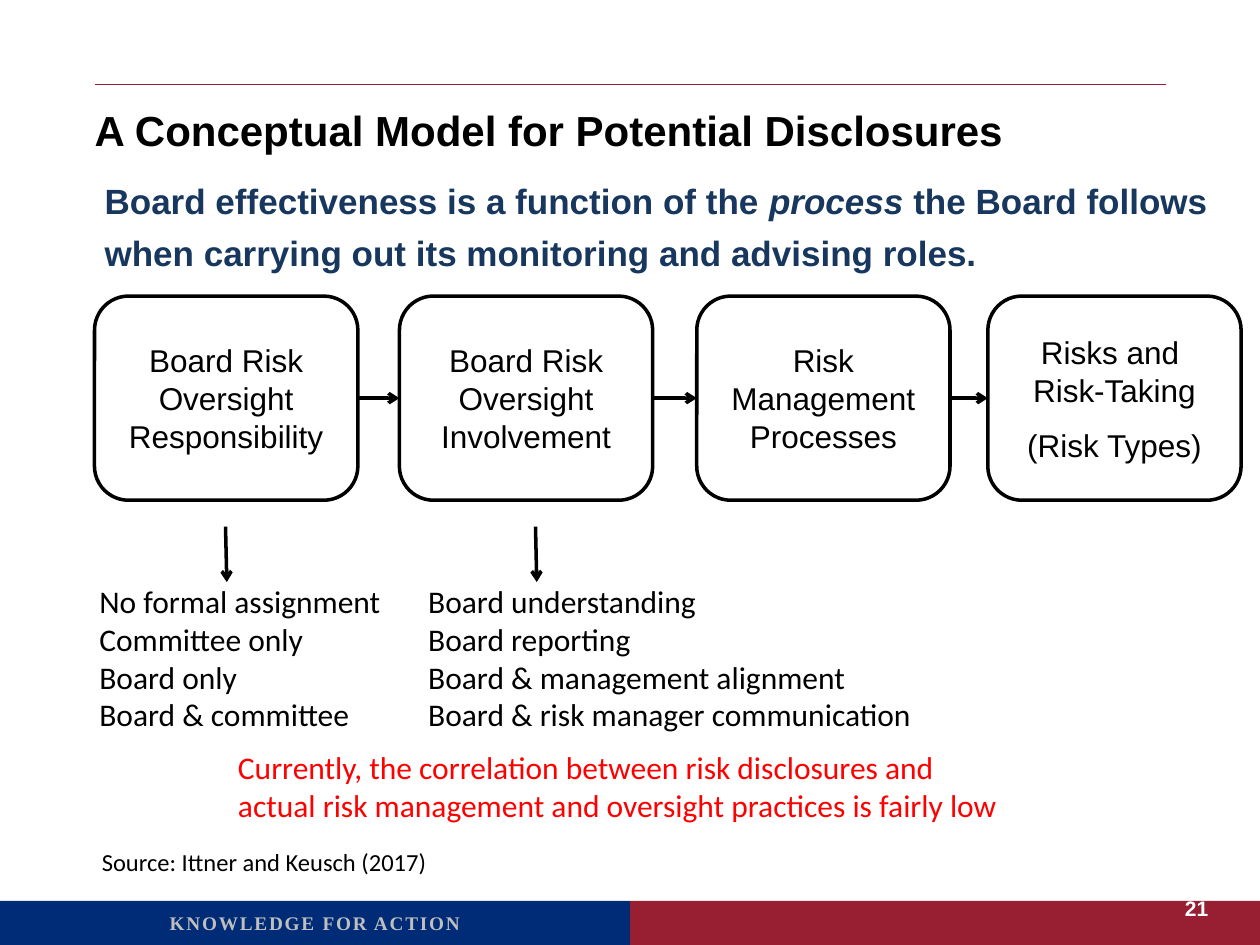
"""Build the slide on a conceptual model for potential risk disclosures."""
import pptx
import pptx.util
import pptx.dml.color
import pptx.enum.shapes
import pptx.enum.text
import pptx.oxml.ns
import lxml.etree

Inches = pptx.util.Inches
Pt = pptx.util.Pt
SHAPES = pptx.enum.shapes.MSO_SHAPE
ALIGN = pptx.enum.text.PP_ALIGN
ANCHOR = pptx.enum.text.MSO_ANCHOR
STRAIGHT = pptx.enum.shapes.MSO_CONNECTOR.STRAIGHT


def color(hex_string):
    return pptx.dml.color.RGBColor.from_string(hex_string)


def write(frame, lines, size, font, hex_string, bold=False, align=ALIGN.LEFT, after=0):
    frame.text = "\n".join(lines)
    for paragraph in frame.paragraphs:
        paragraph.alignment = align
        paragraph.space_after = Pt(after)
        paragraph.font.size = Pt(size)
        paragraph.font.name = font
        paragraph.font.bold = bold
        paragraph.font.color.rgb = color(hex_string)


deck = pptx.Presentation()
deck.slide_width, deck.slide_height = Inches(10), Inches(7.5)
slide = deck.slides.add_slide(deck.slide_layouts[1])
shapes = slide.shapes

for left, fill in [(5, "981E32"), (0, "002C77")]:
    band = shapes.add_shape(SHAPES.RECTANGLE, Inches(left), Inches(7.15), Inches(5), Inches(0.35))
    band.shadow.inherit = False
    band.fill.solid()
    band.fill.fore_color.rgb = color(fill)
    band.line.fill.background()

title, statement = shapes.title, slide.placeholders[1]
title.left, title.top, title.width, title.height = map(Inches, (0.75, 0.83, 8.5, 0.83))
statement.left, statement.top, statement.width, statement.height = map(Inches, (0.83, 1.34, 8.9, 5.04))
for frame in (title.text_frame, statement.text_frame):
    frame.margin_left = frame.margin_right = frame.margin_top = frame.margin_bottom = 0
    frame.vertical_anchor = ANCHOR.TOP
    frame.auto_size = pptx.enum.text.MSO_AUTO_SIZE.NONE
write(title.text_frame, ["A Conceptual Model for Potential Disclosures"], 24, "Arial", "000000", bold=True)
write(statement.text_frame, ["Board effectiveness is a function of the "], 20, "Arial", "17375E", bold=True, after=14)

claim = statement.text_frame.paragraphs[0]
claim.line_spacing = 1.25
claim.space_before = Pt(0)
emphasis = claim.add_run()
emphasis.text = "process"
emphasis.font.italic = True
claim.add_run().text = " the Board follows when carrying out its monitoring and advising roles."
claim_format = claim._p.get_or_add_pPr()
claim_format.set("marL", "0")
claim_format.set("indent", "0")
no_bullet = lxml.etree.Element(pptx.oxml.ns.qn("a:buNone"))
claim_format.find(pptx.oxml.ns.qn("a:defRPr")).addprevious(no_bullet)

stages = []
for left, width, lines in [
    (0.75, 2.09, ["Board Risk Oversight Responsibility"]),
    (3.17, 2.01, ["Board Risk Oversight Involvement"]),
    (5.53, 2.01, ["Risk Management Processes"]),
    (7.84, 2.01, ["Risks and \vRisk-Taking", "(Risk Types)"]),
]:
    stage = shapes.add_shape(SHAPES.ROUNDED_RECTANGLE, Inches(left), Inches(2.35), Inches(width), Inches(1.62))
    stage.shadow.inherit = False
    stage.fill.solid()
    stage.fill.fore_color.rgb = color("FFFFFF")
    stage.line.color.rgb = color("000000")
    stage.line.width = Pt(2)
    stage.text_frame.vertical_anchor = ANCHOR.MIDDLE
    write(stage.text_frame, lines, 18, "Arial", "000000", align=ALIGN.CENTER, after=10)
    stages.append(stage)

rule = shapes.add_connector(STRAIGHT, Inches(0.75), Inches(0.67), Inches(9.25), Inches(0.67))
arrows = []
for source, target in zip(stages, stages[1:]):
    arrow = shapes.add_connector(STRAIGHT, 0, 0, 0, 0)
    arrow.begin_connect(source, 3)
    arrow.end_connect(target, 1)
    arrows.append(arrow)
for x in (1.79, 4.25):
    arrows.append(shapes.add_connector(STRAIGHT, Inches(x), Inches(4.18), Inches(x + 0.01), Inches(4.62)))
for connector in [rule] + arrows:
    connector.line.color.rgb = color("981E32" if connector is rule else "000000")
    connector.line.width = Pt(0.5 if connector is rule else 2)
    lxml.etree.SubElement(connector._element.spPr, pptx.oxml.ns.qn("a:effectLst"))
for arrow in arrows:
    lxml.etree.SubElement(arrow.line._get_or_add_ln(), pptx.oxml.ns.qn("a:tailEnd"), type="arrow")

for left, top, width, height, wrap, size, hex_string, lines in [
    (0.69, 4.57, 2.91, 1.31, True, 18, "000000",
     ["No formal assignment", "Committee only", "Board only", "Board & committee"]),
    (3.3, 4.57, 4.88, 1.31, True, 18, "000000",
     ["Board understanding", "Board reporting", "Board & management alignment",
      "Board & risk manager communication"]),
    (0.71, 6.67, 2.8, 0.34, False, 14, "000000", ["Source: Ittner and Keusch (2017)"]),
    (1.79, 5.89, 6.29, 0.71, False, 18, "FF0000",
     ["Currently, the correlation between risk disclosures and",
      "actual risk management and oversight practices is fairly low"]),
]:
    note = shapes.add_textbox(Inches(left), Inches(top), Inches(width), Inches(height))
    note.text_frame.word_wrap = wrap
    write(note.text_frame, lines, size, "Calibri", hex_string)

motto = shapes.add_textbox(0, Inches(7.18), Inches(5), Inches(0.29)).text_frame
motto.word_wrap = True
write(motto, ["KNOWLEDGE FOR ACTION"], 11, "Times New Roman", "BFBFBF", bold=True, align=ALIGN.CENTER)
motto.paragraphs[0].runs[0]._r.get_or_add_rPr().set("spc", "100")

page_number = shapes.add_textbox(Inches(7.64), Inches(7.01), Inches(2.2), Inches(0.39)).text_frame
page_number.word_wrap = True
page_number.margin_left, page_number.margin_right = 0, Inches(0.25)
page_number.vertical_anchor = ANCHOR.MIDDLE
write(page_number, ["21"], 12, "Arial", "FFFFFF", bold=True, align=ALIGN.RIGHT)

deck.save("out.pptx")
